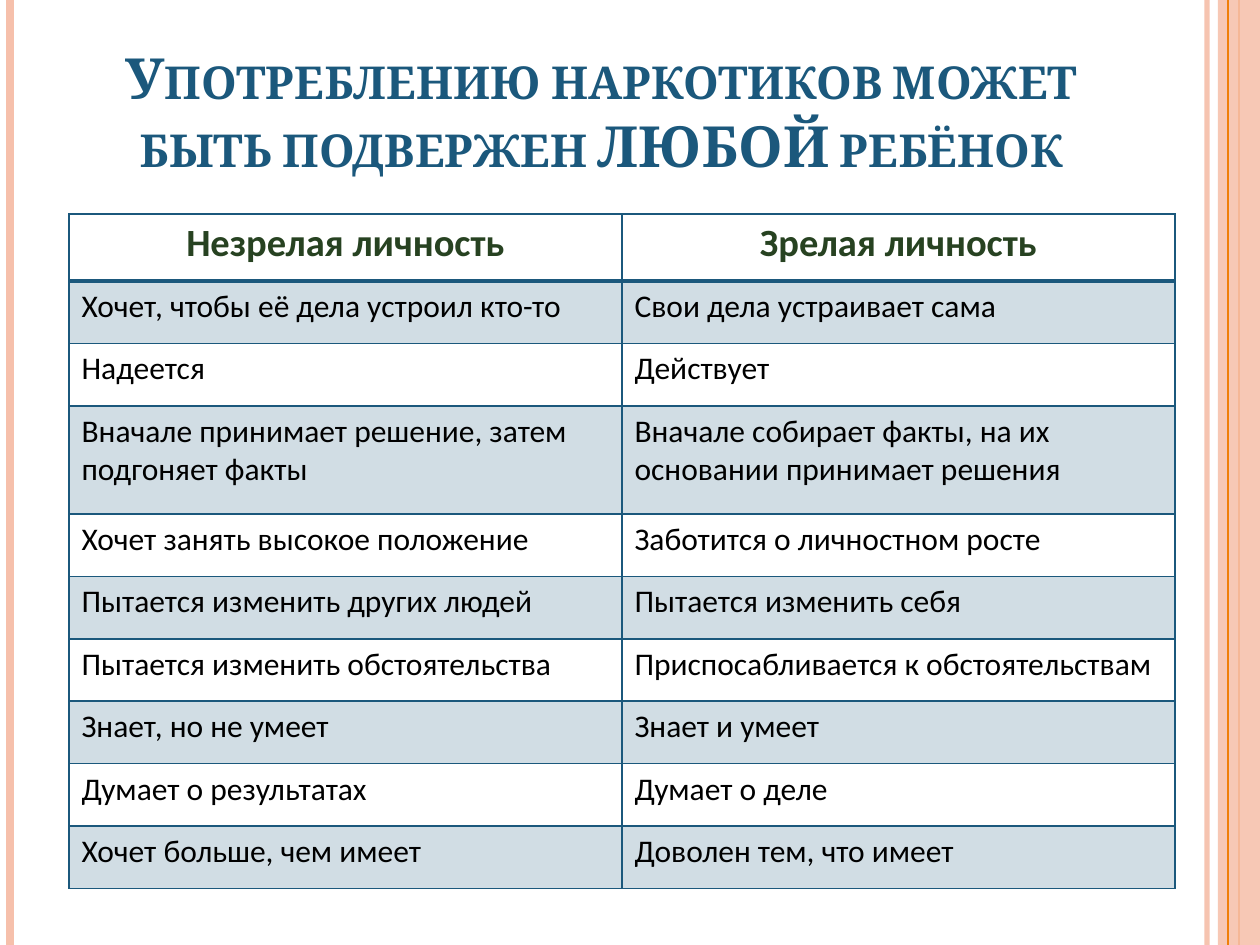
from lxml import etree
from pptx import Presentation
from pptx.dml.color import RGBColor
from pptx.enum.shapes import MSO_CONNECTOR, MSO_SHAPE
from pptx.enum.text import MSO_ANCHOR, PP_ALIGN
from pptx.oxml.ns import qn
from pptx.util import Pt

STRAIGHT, RECTANGLE = MSO_CONNECTOR.STRAIGHT, MSO_SHAPE.RECTANGLE
LEFT, CENTER, BOTTOM = PP_ALIGN.LEFT, PP_ALIGN.CENTER, MSO_ANCHOR.BOTTOM

BLUE = RGBColor(0x1B, 0x58, 0x7C)
GREEN = RGBColor(0x27, 0x42, 0x21)
BLACK = RGBColor(0, 0, 0)
PEACH = RGBColor(0xF6, 0xC0, 0xAB)
ORANGE = RGBColor(0xF0, 0x7F, 0x09)

WIDTH, HEIGHT = 1260, 945
TITLE = "Употреблению наркотиков может быть подвержен ЛЮБОЙ ребёнок"
TRAITS = [
    ("Незрелая личность", "Зрелая личность"),
    ("Хочет, чтобы её дела устроил кто-то", "Свои дела устраивает сама"),
    ("Надеется", "Действует"),
    ("Вначале принимает решение, затем подгоняет факты",
     "Вначале собирает факты, на их основании принимает решения"),
    ("Хочет занять высокое положение", "Заботится о личностном росте"),
    ("Пытается изменить других людей", "Пытается изменить себя"),
    ("Пытается изменить обстоятельства",
     "Приспосабливается к обстоятельствам"),
    ("Знает, но не умеет", "Знает и умеет"),
    ("Думает о результатах", "Думает о деле"),
    ("Хочет больше, чем имеет", "Доволен тем, что имеет"),
]
TABLE_HEIGHT = 675
SPECIAL_ROWS = {0: 67, 3: 108}  # header and the two-line row


def px(n):
    return round(n * 914400 / 126)


def set_alpha(fill, percent):
    """Make a solid fill see-through; percent is its opacity."""
    clr = fill._xPr.find(qn("a:solidFill"))[0]
    etree.SubElement(clr, qn("a:alpha"), val=str(percent * 1000))


class SlideBuilder:
    """Holds the text style and the slide being filled."""

    def __init__(self, slide, heading_font="Cambria", body_font="Calibri"):
        self.slide = slide
        self.heading_font = heading_font
        self.body_font = body_font

    def format_text(self, tf, font, size, color, bold, align):
        for p in tf.paragraphs:
            p.alignment = align
            for r in p.runs:
                r.font.name = font
                r.font.size = Pt(size)
                r.font.bold = bold
                r.font.color.rgb = color

    def stripe(self, x, color, width, opacity=100):
        line = self.slide.shapes.add_connector(
            STRAIGHT, px(x), 0, px(x), px(HEIGHT))
        line.line.color.rgb = color
        line.line.width = Pt(width)
        if opacity < 100:
            set_alpha(line.line.fill, opacity)
        etree.SubElement(line._element.spPr, qn("a:effectLst"))

    def band(self, x, width, color, opacity):
        s = self.slide.shapes.add_shape(
            RECTANGLE, px(x), 0, px(width), px(HEIGHT))
        s.shadow.inherit = False
        s.fill.solid()
        s.fill.fore_color.rgb = color
        set_alpha(s.fill, opacity)
        s.line.fill.background()

    def title(self, text, x, y, w, h):
        s = self.slide.shapes.title
        s.left, s.top, s.width, s.height = px(x), px(y), px(w), px(h)
        tf = s.text_frame
        tf.text = text
        tf.word_wrap = True
        tf.vertical_anchor = BOTTOM
        self.format_text(tf, self.heading_font, 32.4, BLUE, True, CENTER)
        tf.paragraphs[0].runs[0].font._element.set("cap", "small")

    def cell_borders(self, cell, widths):
        """Draw the left, right, top and bottom borders, in points."""
        tcPr = cell._tc.get_or_add_tcPr()
        for i, (side, width) in enumerate(zip("LRTB", widths)):
            ln = etree.Element(qn("a:ln" + side), w=str(Pt(width)))
            solid = etree.SubElement(ln, qn("a:solidFill"))
            etree.SubElement(solid, qn("a:srgbClr"), val=str(BLUE))
            tcPr.insert(i, ln)

    def table(self, rows, x, y, w, h, special_rows):
        cols = len(rows[0])
        table = self.slide.shapes.add_table(
            len(rows), cols, px(x), px(y), px(w), px(h)).table
        table.horz_banding = False
        table.first_row = False
        for col in table.columns:
            col.width = px(w / cols)
        plain = (h - sum(special_rows.values())) / (len(rows) - len(special_rows))
        for i, texts in enumerate(rows):
            table.rows[i].height = px(special_rows.get(i, plain))
            for j, text in enumerate(texts):
                cell = table.cell(i, j)
                cell.text = text
                if i == 0:
                    style = 22, GREEN, True, CENTER
                else:
                    style = 18, BLACK, False, LEFT
                self.format_text(cell.text_frame, self.body_font, *style)
                if i % 2:
                    cell.fill.solid()
                    cell.fill.fore_color.rgb = BLUE
                    set_alpha(cell.fill, 20)
                else:
                    cell.fill.background()
                self.cell_borders(
                    cell, (1, 1, 2 if i == 1 else 1, 2 if i == 0 else 1))


def main():
    prs = Presentation()
    prs.slide_width, prs.slide_height = px(WIDTH), px(HEIGHT)
    s = SlideBuilder(prs.slides.add_slide(prs.slide_layouts[5]))
    s.stripe(1207, PEACH, 3, 93)
    s.stripe(10, PEACH, 4.5)
    s.stripe(1239, ORANGE, 1.5)
    s.band(1218, 42, PEACH, 87)
    s.stripe(1228, ORANGE, 0.75)
    s.title(TITLE, 87, 28, 1029, 157)
    s.table(TRAITS, 69, 214, 1106, TABLE_HEIGHT, SPECIAL_ROWS)
    prs.save("out.pptx")


if __name__ == "__main__":
    main()
